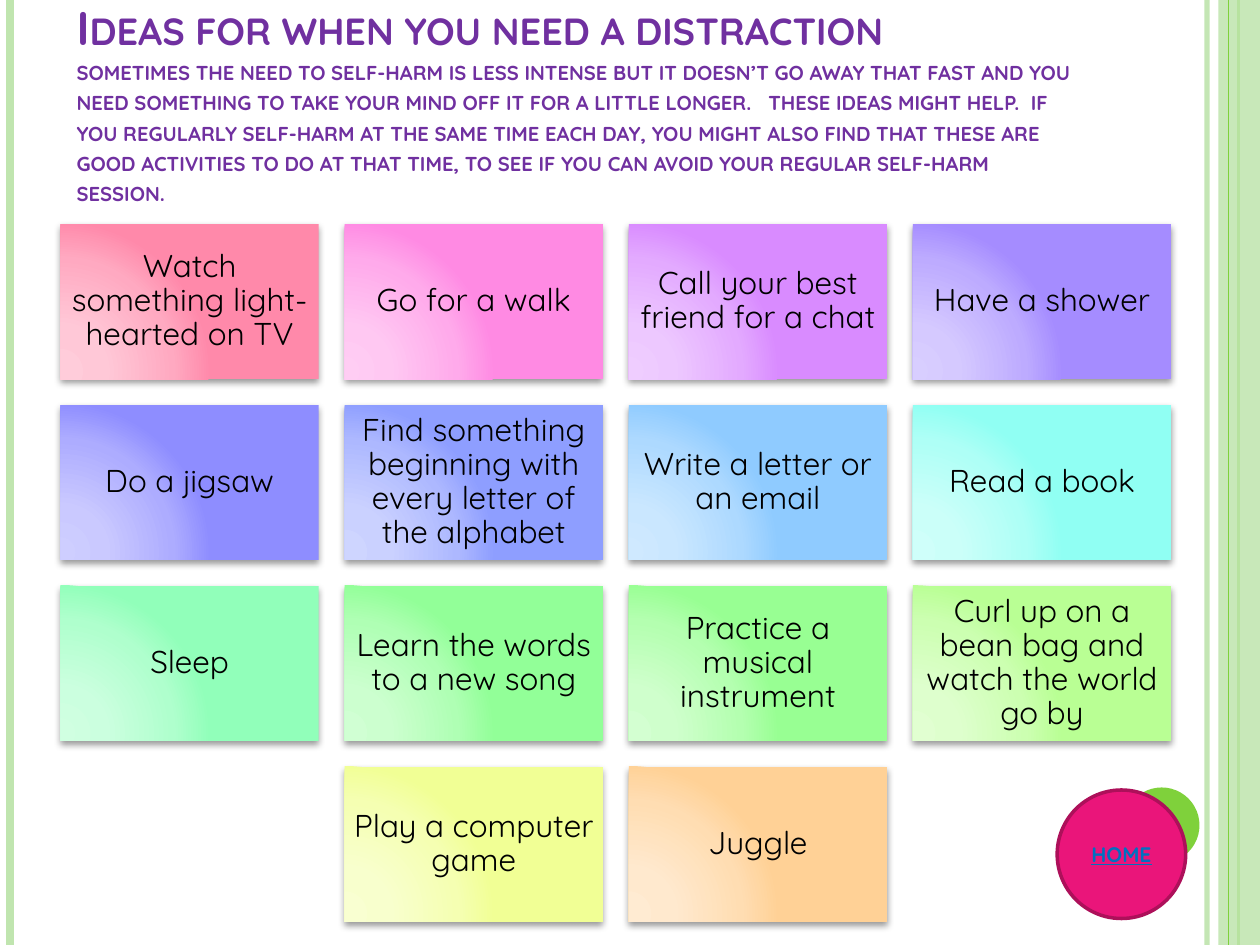
from typing import NamedTuple

from lxml.etree import SubElement
from pptx import Presentation
from pptx.dml.color import RGBColor
from pptx.enum.shapes import MSO_CONNECTOR as Conn, MSO_SHAPE as Shape
from pptx.enum.text import MSO_ANCHOR as Anchor, PP_ALIGN as Align
from pptx.oxml import parse_xml
from pptx.oxml.ns import nsdecls, qn
from pptx.util import Inches, Pt

FONT = "Quicksand"
COLORS = {
    "green": "7FD13B", "pale": "C0E5AF", "purple": "7030A0", "black": "000000",
    "pink": "EA157A", "rim": "AD105A", "link": "0070C0",
}
WIDTH, HEIGHT = 10, 7.5

# Card grid, in inches
LEFT, TOP, CARD_W, CARD_H = 0.48, 1.78, 2.05, 1.23
GAP = CARD_W / 10
TINTS = {0: 0.57, 30: 0.53, 75: 0.27, 100: 0}  # stop position: share of white


class Stripe(NamedTuple):
    x: float
    color: str
    weight: float
    alpha: int = 100


class Card(NamedTuple):
    col: int
    row: int
    color: str
    text: str


STRIPES = [
    Stripe(9.58, "pale", 3, 93), Stripe(0.08, "pale", 4.5),
    Stripe(9.83, "green", 1.5), Stripe(9.75, "green", 0.75),
]
CARDS = [
    Card(0, 0, "FF89AA", "Watch something light-hearted on TV"),
    Card(1, 0, "FF8AE3", "Go for a walk"),
    Card(2, 0, "D98BFF", "Call your best friend for a chat"),
    Card(3, 0, "A58CFF", "Have a shower"),
    Card(0, 1, "8E8DFF", "Do a jigsaw"),
    Card(1, 1, "8E9EFF", "Find something beginning with every letter of the alphabet"),
    Card(2, 1, "8FCBFF", "Write a letter or an email"),
    Card(3, 1, "90FFF3", "Read a book"),
    Card(0, 2, "91FFBA", "Sleep"),
    Card(1, 2, "92FF98", "Learn the words to a new song"),
    Card(2, 2, "98FF93", "Practice a musical instrument"),
    Card(3, 2, "B9FF94", "Curl up on a bean bag and watch the world go by"),
    Card(1, 3, "F1FF95", "Play a computer game"),
    Card(2, 3, "FFD196", "Juggle"),
]
HEADING = "Ideas for when you need a distraction"
INTRO = (
    "sometimes the need to self-harm is less intense but it doesn’t go away that fast "
    "and you need something to take your mind off it for a little longer.   these ideas "
    "might help.  if you regularly self-harm at the same time each day, you might also "
    "find that these are good activities to do at that time, to see if you can avoid "
    "your regular self-harm session."
)


def rgb(name: str) -> RGBColor:
    return RGBColor.from_string(COLORS[name])


def tint(color: str, share: float) -> str:
    """Mix a colour with the given share of white."""
    base = RGBColor.from_string(color)
    return str(RGBColor(*(round(v + (255 - v) * share) for v in base)))


def set_alpha(el, percent: int) -> None:
    for clr in el.iter(qn("a:srgbClr")):
        SubElement(clr, qn("a:alpha"), val=str(percent * 1000))


def add_run(p, text: str, size: float, color: str, bold: bool = False):
    r = p.add_run()
    r.text = text
    r.font.name, r.font.size, r.font.bold = FONT, Pt(size), bold
    r.font.color.rgb = rgb(color)
    return r


def add_stripe(slide, stripe: Stripe) -> None:
    x = Inches(stripe.x)
    line = slide.shapes.add_connector(Conn.STRAIGHT, x, 0, x, Inches(HEIGHT))
    line.line.color.rgb = rgb(stripe.color)
    line.line.width = Pt(stripe.weight)
    if stripe.alpha < 100:
        set_alpha(line.line._ln, stripe.alpha)
    SubElement(line._element.spPr, qn("a:effectLst"))


def add_solid(slide, kind, x: float, y: float, w: float, h: float, color: str):
    sp = slide.shapes.add_shape(kind, *map(Inches, (x, y, w, h)))
    sp.shadow.inherit = False
    sp.fill.solid()
    sp.fill.fore_color.rgb = rgb(color)
    sp.line.fill.background()
    return sp


def add_card(slide, card: Card) -> None:
    x = LEFT + card.col * (CARD_W + GAP)
    y = TOP + card.row * (CARD_H + GAP)
    sp = slide.shapes.add_shape(Shape.RECTANGLE, *map(Inches, (x, y, CARD_W, CARD_H)))
    sp.line.fill.background()
    # Radial gradient and soft shadow
    stops = "".join(
        f'<a:gs pos="{pos * 1000}"><a:srgbClr val="{tint(card.color, share)}"/></a:gs>'
        for pos, share in TINTS.items())
    sp._element.spPr.find(qn("a:prstGeom")).addnext(parse_xml(
        f'<a:gradFill {nsdecls("a")} rotWithShape="1"><a:gsLst>{stops}</a:gsLst>'
        '<a:path path="circle"><a:fillToRect l="5000" t="100000" r="120000" b="10000"/>'
        '</a:path></a:gradFill>'))
    sp._element.spPr.append(parse_xml(
        f'<a:effectLst {nsdecls("a")}><a:outerShdw blurRad="{Pt(4)}" dist="{Pt(2)}" '
        'dir="5400000" rotWithShape="0"><a:srgbClr val="000000"><a:alpha val="40000"/>'
        '</a:srgbClr></a:outerShdw></a:effectLst>'))
    # Label
    tf = sp.text_frame
    tf.word_wrap, tf.vertical_anchor = True, Anchor.MIDDLE
    tf.margin_left = tf.margin_right = tf.margin_top = tf.margin_bottom = Inches(0.07)
    p = tf.paragraphs[0]
    p.alignment, p.line_spacing = Align.CENTER, 0.9
    add_run(p, card.text, 18, "black")


def add_title(slide) -> None:
    box = slide.shapes.add_textbox(*map(Inches, (0.51, 0.44, 8.17, 1.25)))
    tf = box.text_frame
    tf.word_wrap, tf.vertical_anchor = True, Anchor.BOTTOM
    p = tf.paragraphs[0]
    heading = add_run(p, HEADING, 27, "purple", True)
    p.add_line_break()
    intro = add_run(p, INTRO, 14.4, "purple", True)
    for r in (heading, intro):
        r.font._element.set("cap", "small")


def add_home(slide) -> None:
    sp = add_solid(slide, Shape.OVAL, 8.39, 6.27, 1.02, 1.02, "pink")
    sp.line.color.rgb = rgb("rim")
    sp.line.width = Pt(2)
    tf = sp.text_frame
    tf.vertical_anchor = Anchor.MIDDLE
    p = tf.paragraphs[0]
    p.alignment = Align.CENTER
    add_run(p, "HOME", 12, "link", True).font.underline = True


def main() -> None:
    prs = Presentation()
    prs.slide_width, prs.slide_height = Inches(WIDTH), Inches(HEIGHT)
    slide = prs.slides.add_slide(prs.slide_layouts[6])

    # Side decoration
    *under, top_stripe = STRIPES
    for stripe in under:
        add_stripe(slide, stripe)
    band = add_solid(slide, Shape.RECTANGLE, 9.67, 0, 0.33, HEIGHT, "pale")
    set_alpha(band._element.spPr, 87)
    add_stripe(slide, top_stripe)
    add_solid(slide, Shape.OVAL, 8.92, 6.25, 0.6, 0.6, "green")

    # Content
    add_title(slide)
    for card in CARDS:
        add_card(slide, card)
    add_home(slide)
    prs.save("out.pptx")


if __name__ == "__main__":
    main()
